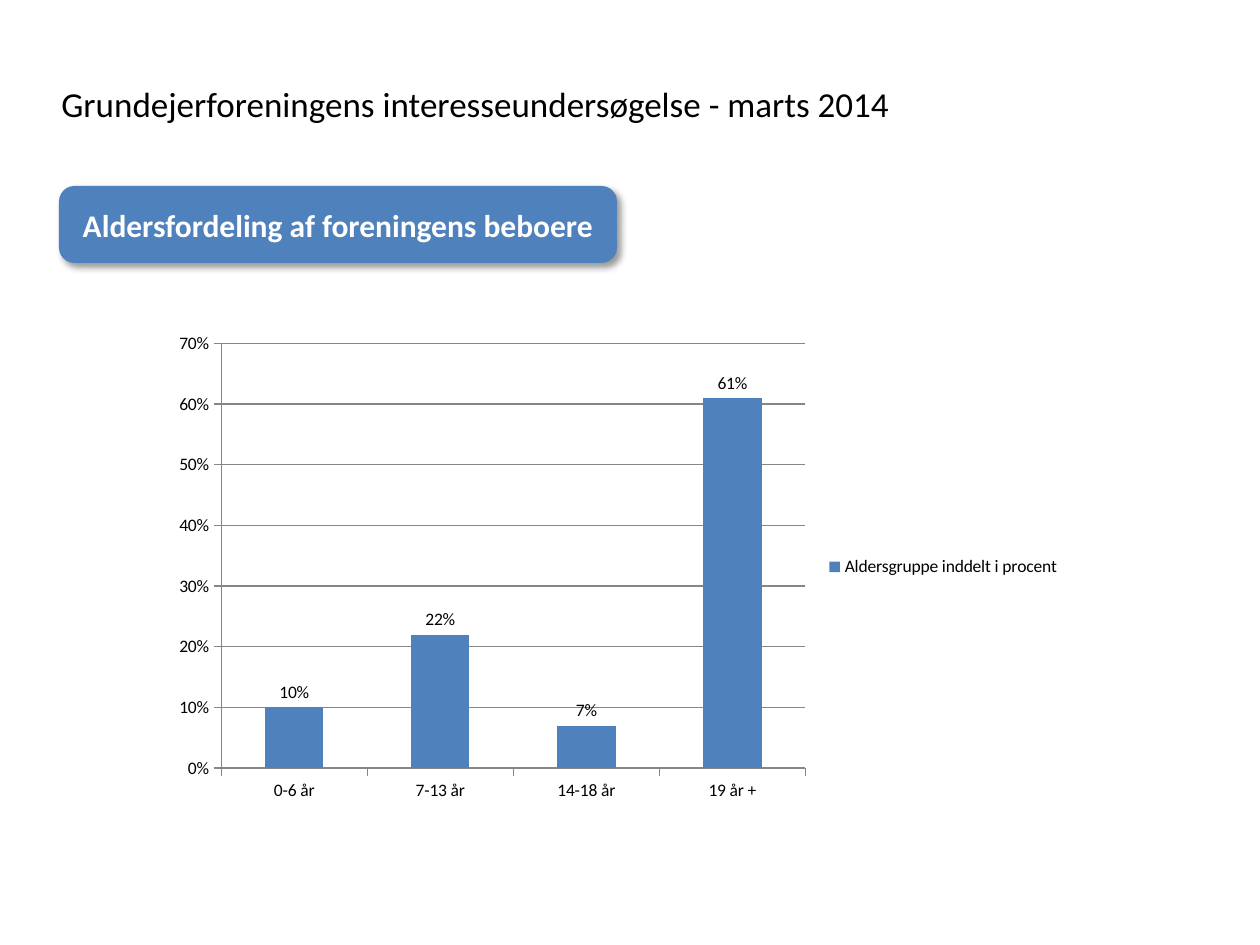
from collections import namedtuple

from lxml.etree import SubElement
from pptx import Presentation
from pptx.chart.data import CategoryChartData
from pptx.dml.color import RGBColor
from pptx.enum.chart import XL_CHART_TYPE, XL_LABEL_POSITION, XL_LEGEND_POSITION, XL_TICK_MARK
from pptx.enum.shapes import MSO_SHAPE
from pptx.enum.text import MSO_ANCHOR, PP_ALIGN
from pptx.oxml.ns import qn
from pptx.util import Emu, Pt

PX_PER_INCH = 126
FONT = "Calibri"
BLACK = RGBColor(0x00, 0x00, 0x00)
WHITE = RGBColor(0xFF, 0xFF, 0xFF)
BLUE = RGBColor(0x4F, 0x81, 0xBD)
GREY = RGBColor(0x86, 0x86, 0x86)

Box = namedtuple("Box", "left top width height")


def px(length):
    return Emu(round(length * 914400 / PX_PER_INCH))


def place(box):
    return [px(length) for length in box]


def write(frame, text, size, color=BLACK, bold=False, align=PP_ALIGN.LEFT, inset=None):
    frame.word_wrap = True
    frame.vertical_anchor = MSO_ANCHOR.MIDDLE
    if inset is not None:
        frame.margin_left = frame.margin_right = px(inset)
        frame.margin_top = frame.margin_bottom = px(inset)
    para = frame.paragraphs[0]
    para.alignment = align
    span = para.add_run()
    span.text = text
    span.font.name = FONT
    span.font.size = Pt(size)
    span.font.bold = bold
    span.font.color.rgb = color


def add_shadow(shape, color, opacity, blur, distance, angle):
    shape.shadow.inherit = False
    effects = shape.element.spPr.find(qn("a:effectLst"))
    shadow = SubElement(effects, qn("a:outerShdw"), blurRad=str(Pt(blur)),
                        dist=str(Pt(distance)), dir=str(angle * 60000),
                        algn="tl", rotWithShape="0")
    tint = SubElement(shadow, qn("a:srgbClr"), val=str(color))
    SubElement(tint, qn("a:alpha"), val=str(opacity * 1000))


def add_title(page, box, text):
    title = page.shapes.add_textbox(*place(box))
    write(title.text_frame, text, size=20)


def add_banner(page, box, text):
    banner = page.shapes.add_shape(MSO_SHAPE.ROUNDED_RECTANGLE, *place(box))
    banner.adjustments[0] = 0.2
    banner.fill.solid()
    banner.fill.fore_color.rgb = BLUE
    banner.line.fill.background()
    add_shadow(banner, BLACK, opacity=40, blur=4, distance=3, angle=45)
    write(banner.text_frame, text, size=18, color=WHITE, bold=True,
          align=PP_ALIGN.CENTER, inset=5)


def style_line(line):
    line.color.rgb = GREY
    line.width = Pt(0.75)


def add_age_chart(page, box, series_name, shares):
    data = CategoryChartData(number_format="0%")
    data.categories = list(shares)
    data.add_series(series_name, list(shares.values()))
    chart = page.shapes.add_chart(XL_CHART_TYPE.COLUMN_CLUSTERED, *place(box), data).chart
    chart.has_title = False
    chart.font.name = FONT
    chart.font.size = Pt(10)
    chart.font.color.rgb = BLACK
    chart.has_legend = True
    chart.legend.position = XL_LEGEND_POSITION.RIGHT
    chart.legend.include_in_layout = False

    for axis in (chart.category_axis, chart.value_axis):
        axis.major_tick_mark = XL_TICK_MARK.OUTSIDE
        axis.minor_tick_mark = XL_TICK_MARK.NONE
        style_line(axis.format.line)
    values = chart.value_axis
    values.minimum_scale, values.maximum_scale, values.major_unit = 0, 0.7, 0.1
    values.tick_labels.number_format = "0%"
    values.tick_labels.number_format_is_linked = False
    values.has_major_gridlines = True
    style_line(values.major_gridlines.format.line)

    plot = chart.plots[0]
    plot.vary_by_categories = False
    plot.gap_width = 150
    plot.series[0].format.fill.solid()
    plot.series[0].format.fill.fore_color.rgb = BLUE
    plot.has_data_labels = True
    labels = plot.data_labels
    labels.show_value = True
    labels.number_format = "0%"
    labels.number_format_is_linked = False
    labels.position = XL_LABEL_POSITION.OUTSIDE_END


def main():
    deck = Presentation()
    deck.slide_width, deck.slide_height = px(1260), px(945)
    page = deck.slides.add_slide(deck.slide_layouts[6])
    add_title(page, Box(49, 47, 1076, 113),
              "Grundejerforeningens interesseundersøgelse - marts 2014")
    add_banner(page, Box(59, 186, 558, 77), "Aldersfordeling af foreningens beboere")
    add_age_chart(page, Box(161, 324, 912, 486), "Aldersgruppe inddelt i procent",
                  {"0-6 år": 0.1, "7-13 år": 0.22, "14-18 år": 0.07, "19 år +": 0.61})
    deck.save("out.pptx")


if __name__ == "__main__":
    main()
